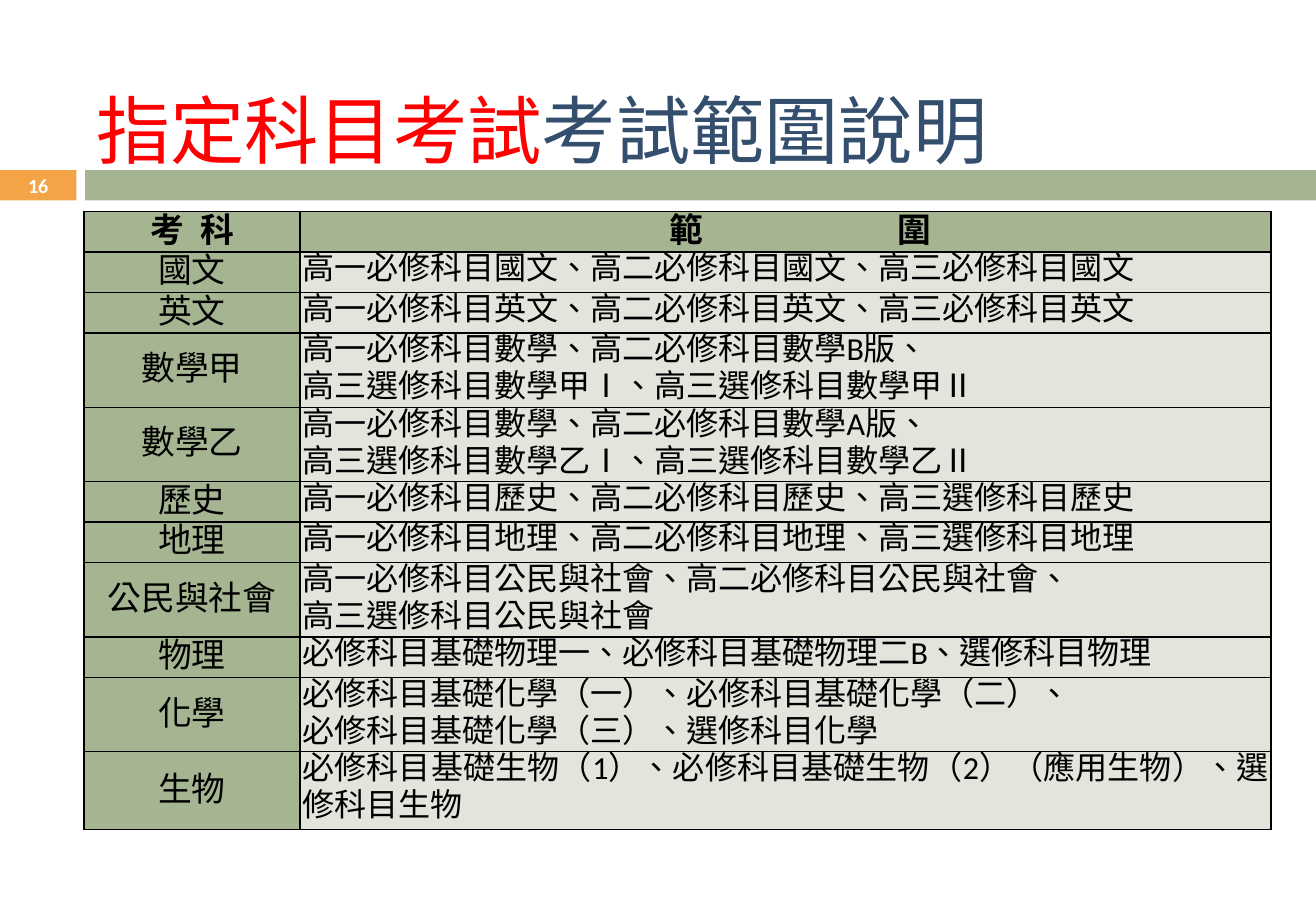
from lxml.etree import SubElement
from pptx import Presentation
from pptx.dml.color import RGBColor
from pptx.enum.lang import MSO_LANGUAGE_ID as Language
from pptx.enum.shapes import MSO_SHAPE as Shape
from pptx.enum.text import MSO_ANCHOR as Anchor, MSO_AUTO_SIZE as AutoSize, PP_ALIGN as Align
from pptx.oxml.ns import qn
from pptx.util import Inches, Pt

GREEN, PALE, ORANGE = "A5B592", "E1E5DC", "F3A447"
RED, NAVY, BLACK, WHITE = "FF0000", "344E6D", "000000", "FFFFFF"

HEADINGS = ("考科", 9.5, 0), ("範圍", 115, 0.25)
SUBJECTS = [
    ("國文", "高一必修科目國文、高二必修科目國文、高三必修科目國文"),
    ("英文", "高一必修科目英文、高二必修科目英文、高三必修科目英文"),
    ("數學甲", "高一必修科目數學、高二必修科目數學B版、\n高三選修科目數學甲Ⅰ、高三選修科目數學甲Ⅱ"),
    ("數學乙", "高一必修科目數學、高二必修科目數學A版、\n高三選修科目數學乙Ⅰ、高三選修科目數學乙Ⅱ"),
    ("歷史", "高一必修科目歷史、高二必修科目歷史、高三選修科目歷史"),
    ("地理", "高一必修科目地理、高二必修科目地理、高三選修科目地理"),
    ("公民與社會", "高一必修科目公民與社會、高二必修科目公民與社會、\n高三選修科目公民與社會"),
    ("物理", "必修科目基礎物理一、必修科目基礎物理二B、選修科目物理"),
    ("化學", "必修科目基礎化學（一）、必修科目基礎化學（二）、\n必修科目基礎化學（三）、選修科目化學"),
    ("生物", "必修科目基礎生物（1）、必修科目基礎生物（2）（應用生物）、選修科目生物"),
]
ROW_HEIGHTS = [24, 24, 24, 44, 44, 24, 24, 44, 24, 44, 46]


def color(value):
    return RGBColor.from_string(value)


class ExamSlide:
    grid = Inches(0.1)
    table_font = "Calibri"

    def __init__(self, presentation):
        self.slide = presentation.slides.add_slide(presentation.slide_layouts[5])
        self.shapes = self.slide.shapes

    def place(self, *cells):
        return [round(cell * self.grid) for cell in cells]

    def format_run(self, run, size, fill, font_name, bold=False):
        font = run.font
        font.size, font.name, font.bold = Pt(size), font_name, bold
        font.color.rgb = color(fill)
        font.language_id = Language.TRADITIONAL_CHINESE

    def title(self, parts, *cells):
        shape = self.shapes.title
        shape.left, shape.top, shape.width, shape.height = self.place(*cells)
        text_frame = shape.text_frame
        text_frame.auto_size = AutoSize.NONE
        text_frame.vertical_anchor = Anchor.MIDDLE
        text_frame.margin_right = 0
        paragraph = text_frame.paragraphs[0]
        paragraph.alignment = Align.LEFT
        for text, fill in parts:
            run = paragraph.add_run()
            run.text = text
            self.format_run(run, 44, fill, "Arial")

    def band(self, fill, *cells):
        shape = self.shapes.add_shape(Shape.RECTANGLE, *self.place(*cells))
        shape.shadow.inherit = False
        shape.fill.solid()
        shape.fill.fore_color.rgb = color(fill)
        shape.line.fill.background()

    def page_number(self, text, *cells):
        text_frame = self.shapes.add_textbox(*self.place(*cells)).text_frame
        text_frame.word_wrap = True
        text_frame.margin_top = text_frame.margin_bottom = 0
        text_frame.vertical_anchor = Anchor.MIDDLE
        text_frame.text = text
        paragraph = text_frame.paragraphs[0]
        paragraph.alignment = Align.CENTER
        self.format_run(paragraph.runs[0], 11.9, WHITE, self.table_font, True)

    def table(self, column_widths, row_heights, *cells):
        frame = self.shapes.add_table(len(row_heights), len(column_widths), *self.place(*cells))
        table = frame.table
        table.first_row = table.horz_banding = False
        for column, width in zip(table.columns, self.place(*column_widths)):
            column.width = width
        for row, height in zip(table.rows, row_heights):
            row.height = Pt(height)
        return table

    def border(self, cell):
        properties = cell._tc.get_or_add_tcPr()
        for side in ("a:lnL", "a:lnR", "a:lnT", "a:lnB"):
            line = SubElement(properties, qn(side), w=str(Pt(1)))
            SubElement(SubElement(line, qn("a:solidFill")), qn("a:srgbClr"), val=BLACK)

    def cell(self, cell, text, fill, size, spacing, alignment, anchor, bold=False):
        self.border(cell)
        cell.fill.solid()
        cell.fill.fore_color.rgb = color(fill)
        cell.margin_left = cell.margin_right = Inches(0.02)
        cell.margin_top = cell.margin_bottom = 0
        cell.vertical_anchor = anchor
        cell.text_frame.text = text
        for paragraph in cell.text_frame.paragraphs:
            paragraph.alignment = alignment
            paragraph.line_spacing = Pt(spacing)
            self.format_run(paragraph.runs[0], size, BLACK, self.table_font, bold)

    def heading(self, cell, text, gap, indent):
        first, last = text
        self.cell(cell, first, GREEN, 20, 24, Align.CENTER, Anchor.MIDDLE, True)
        cell.margin_left += Inches(indent)
        paragraph = cell.text_frame.paragraphs[0]
        paragraph.runs[0]._r.get_or_add_rPr().set("spc", str(round(gap * 100)))
        run = paragraph.add_run()
        run.text = last
        self.format_run(run, 20, BLACK, self.table_font, True)

    def subject(self, row, name, scope):
        name_cell, scope_cell = row.cells
        self.cell(name_cell, name, GREEN, 20, 24, Align.CENTER, Anchor.MIDDLE)
        self.cell(scope_cell, scope, PALE, 19, 22, Align.JUSTIFY, Anchor.TOP)


def main():
    presentation = Presentation()
    presentation.slide_width, presentation.slide_height = Inches(10.83), Inches(7.5)
    exam = ExamSlide(presentation)
    exam.band(ORANGE, 0, 14, 6.3, 2.5)
    exam.band(GREEN, 7, 14, 101.3, 2.5)
    exam.title([("指定科目考試", RED), ("考試範圍說明", NAVY)], 6.9, 5.2, 75.6, 10.8)
    table = exam.table([17.8, 79.9], ROW_HEIGHTS, 6.9, 17.4, 97.7, 50.8)
    for cell, heading in zip(table.rows[0].cells, HEADINGS):
        exam.heading(cell, *heading)
    for row, subject in zip(list(table.rows)[1:], SUBJECTS):
        exam.subject(row, *subject)
    exam.page_number("16", 0, 13.9, 6.3, 2.7)
    presentation.save("out.pptx")


if __name__ == "__main__":
    main()
